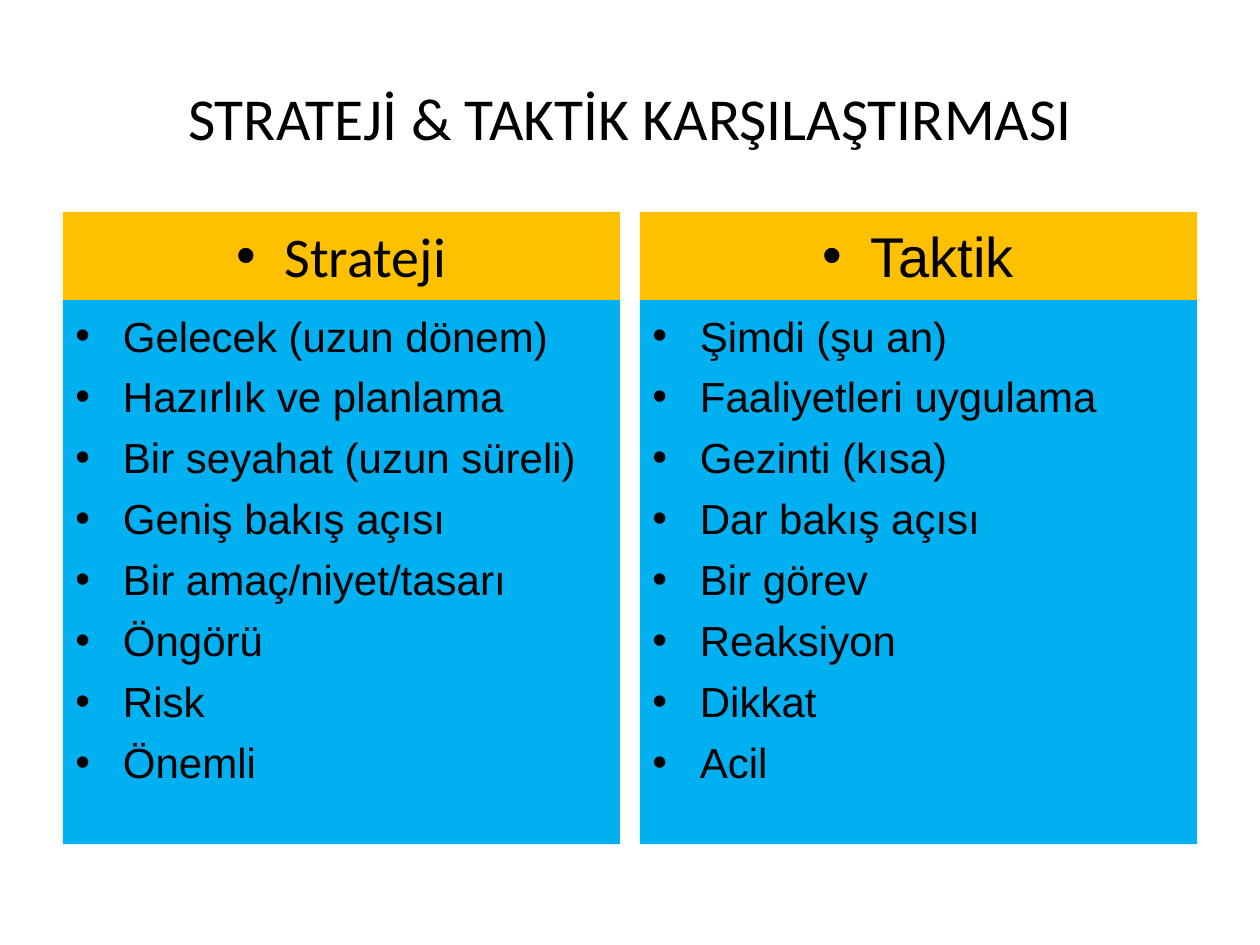
from lxml import etree
from pptx import Presentation
from pptx.dml.color import RGBColor
from pptx.enum import shapes, text
from pptx.oxml.ns import qn
from pptx.util import Cm, Pt


def paint(color_format, value):
    color_format.rgb = RGBColor.from_string(value)


def add_panel(page, left, top, height, fill, lines, font, size, align):
    """Add a filled rectangle holding a bulleted list."""
    box = page.shapes.add_shape(
        shapes.MSO_SHAPE.RECTANGLE, Cm(left), Cm(top), Cm(PANEL_WIDTH), Cm(height))
    box.shadow.inherit = False
    box.fill.solid()
    paint(box.fill.fore_color, fill)
    box.line.fill.background()
    frame = box.text_frame
    frame.word_wrap = True
    frame.vertical_anchor = text.MSO_ANCHOR.TOP
    frame.margin_top = Cm(0.2)
    frame.text = "\n".join(lines)
    for index, para in enumerate(frame.paragraphs):
        para.alignment = align
        if index:
            para.space_before = Pt(6)
        properties = para._p.get_or_add_pPr()
        properties.set("marL", str(Cm(0.96)))
        properties.set("indent", str(-Cm(0.96)))
        bullet_font = etree.SubElement(properties, qn("a:buFont"))
        bullet_font.set("typeface", "Arial")
        etree.SubElement(properties, qn("a:buChar")).set("char", "•")
        for span in para.runs:
            span.font.name = font
            span.font.size = Pt(size)
            paint(span.font.color, "000000")


MARGIN = 1.27
PANEL_WIDTH = 11.23
COLUMN_STEP = 11.63
HEADER_TOP = 4.27
HEADER_HEIGHT = 1.78
LIST_HEIGHT = 10.97

deck = Presentation()
deck.slide_width = Cm(25.4)
deck.slide_height = Cm(19.05)
page = deck.slides.add_slide(deck.slide_layouts[5])

# Title
title = page.shapes.title
title.left, title.top = Cm(MARGIN), Cm(0.76)
title.width, title.height = Cm(22.86), Cm(3.18)
title.text_frame.text = "STRATEJİ & TAKTİK KARŞILAŞTIRMASI"
title.text_frame.vertical_anchor = text.MSO_ANCHOR.MIDDLE
title_para = title.text_frame.paragraphs[0]
title_para.alignment = text.PP_ALIGN.CENTER
title_span = title_para.runs[0]
title_span.font.name = "Calibri"
title_span.font.size = Pt(34)
paint(title_span.font.color, "000000")

# Comparison columns: heading, heading font, points
columns = [
    ("Strateji", "Calibri", [
        "Gelecek (uzun dönem)", "Hazırlık ve planlama",
        "Bir seyahat (uzun süreli)", "Geniş bakış açısı",
        "Bir amaç/niyet/tasarı", "Öngörü", "Risk", "Önemli"]),
    ("Taktik", "Arial", [
        "Şimdi (şu an)", "Faaliyetleri uygulama", "Gezinti (kısa)",
        "Dar bakış açısı", "Bir görev", "Reaksiyon", "Dikkat", "Acil"]),
]
for index, (heading, heading_font, points) in enumerate(columns):
    left = MARGIN + index * COLUMN_STEP
    add_panel(page, left, HEADER_TOP, HEADER_HEIGHT, "FFC000",
              [heading], heading_font, 32, text.PP_ALIGN.CENTER)
    add_panel(page, left, HEADER_TOP + HEADER_HEIGHT, LIST_HEIGHT, "00B0F0",
              points, "Arial", 24, text.PP_ALIGN.LEFT)

deck.save("out.pptx")
